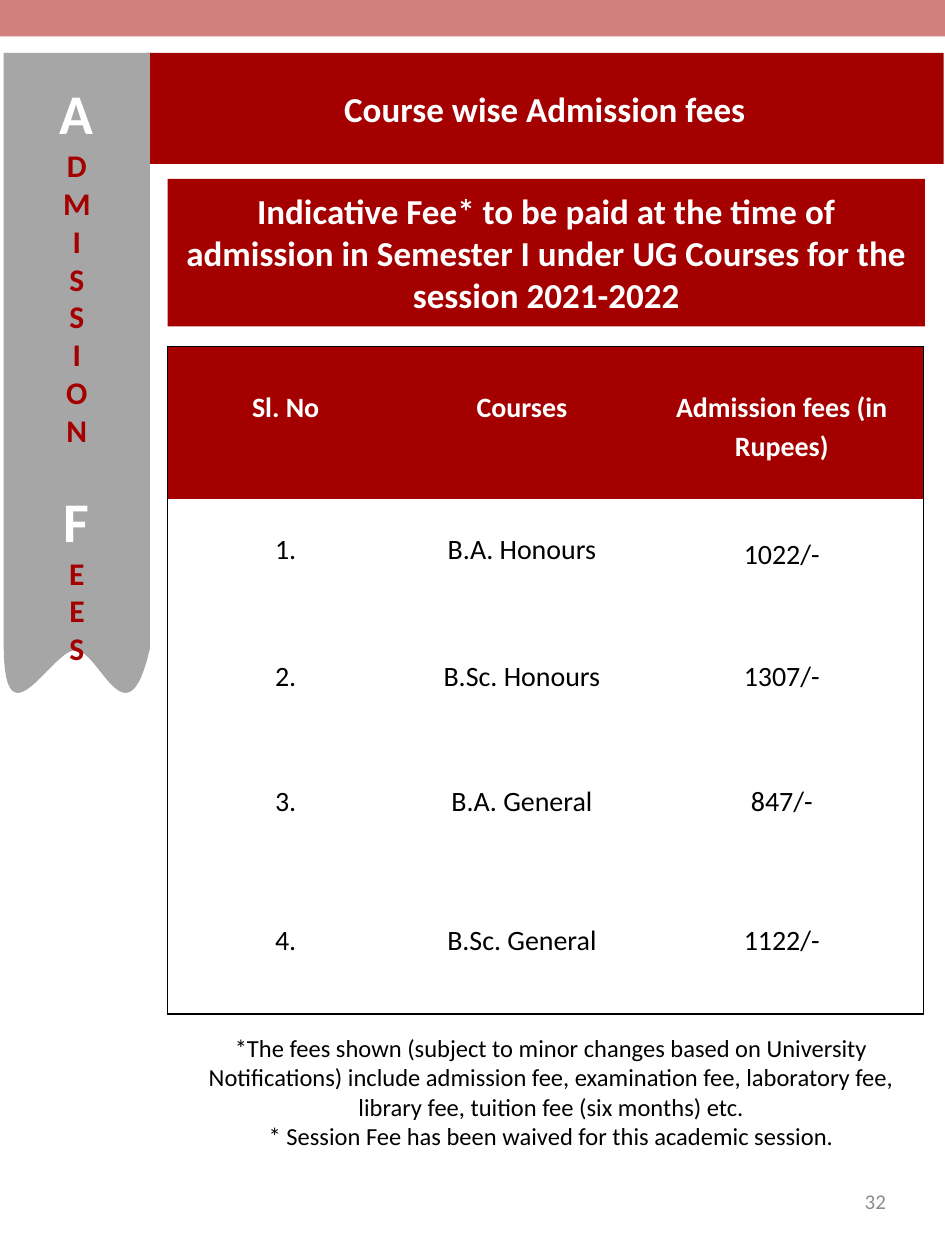
"""Build the course-wise admission fees page."""

from dataclasses import dataclass
from typing import NamedTuple

from lxml.etree import SubElement
from pptx import Presentation
from pptx.dml.color import RGBColor
from pptx.enum.dml import MSO_THEME_COLOR
from pptx.enum.shapes import MSO_SHAPE
from pptx.enum.text import MSO_ANCHOR, MSO_AUTO_SIZE, PP_ALIGN
from pptx.oxml.ns import qn
from pptx.shapes.base import BaseShape
from pptx.slide import Slide
from pptx.table import _Cell
from pptx.text.text import Font, TextFrame
from pptx.util import Inches, Length, Pt

FONT = "Calibri"
RED = RGBColor(0xA4, 0x00, 0x00)
GREY = RGBColor(0xA6, 0xA6, 0xA6)
PALE_GREY = RGBColor(0x8C, 0x8C, 0x8C)
WHITE = RGBColor(0xFF, 0xFF, 0xFF)
BLACK = RGBColor(0x00, 0x00, 0x00)
PAGE_WIDTH, PAGE_HEIGHT = Inches(7.5), Inches(10)
GRID_COLUMNS = 30
UNIT = PAGE_WIDTH / GRID_COLUMNS
CURVE_STEPS = 24


class Area(NamedTuple):
    """A rectangle in grid columns and rows."""

    left: float
    top: float
    width: float
    height: float

    def lengths(self) -> list[Length]:
        return [grid(value) for value in self]


class Point(NamedTuple):
    """A place in grid columns and rows."""

    x: float
    y: float


@dataclass(frozen=True)
class Style:
    """The look of a paragraph."""

    size: float
    color: RGBColor
    bold: bool = False
    align: PP_ALIGN = PP_ALIGN.CENTER
    spacing: float = 1.0


@dataclass(frozen=True)
class FeeRow:
    """One table row with its height and the top margin of each cell."""

    height: float
    texts: tuple[str, str, str]
    margins: tuple[float, float, float] = (1.24, 1.24, 1.24)


HEADING = Style(20, WHITE, bold=True)
HEADER = Style(16, WHITE, bold=True, spacing=1.15)
BODY = Style(16, BLACK)
NOTE = Style(14, BLACK)
NUMBER = Style(12, PALE_GREY, align=PP_ALIGN.RIGHT)
INITIAL = Style(32, WHITE, bold=True)
LETTERS = Style(18, RED, bold=True)

BAND = Area(-0.08, -0.08, 30.08, 1.24)
TITLE = Area(4.64, 1.68, 25.32, 3.52)
SUBTITLE = Area(5.32, 5.68, 24.04, 4.68)
TABLE = Area(5.32, 11, 24, 21.2)
FOOTNOTE = Area(5.32, 32.6, 24.36, 4.16)
PAGE_NUMBER = Area(21.52, 37.08, 7, 2.12)
TABLE_COLUMNS = (7.5, 7.5, 9)

RIBBON_TOP = (Point(0.12, 1.68), Point(4.76, 1.68), Point(4.76, 20.6))
RIBBON_CURVES = (
    (Point(4.76, 20.6), Point(4.04, 23.72), Point(3.16, 20.64), Point(2.4, 20.64)),
    (Point(2.4, 20.64), Point(1.64, 20.64), Point(0.16, 23.72), Point(0.12, 20.6)),
)
RIBBON_TEXT = (("A", INITIAL), ("DMISSION ", LETTERS), ("F", INITIAL), ("EES", LETTERS))

FEES = (
    FeeRow(4.84, ("Sl. No", "Courses", "Admission fees (in Rupees)")),
    FeeRow(3.88, ("1.", "B.A. Honours", "1022/-"), (1.08, 1.08, 1.24)),
    FeeRow(3.96, ("2.", "B.Sc. Honours", "1307/-")),
    FeeRow(4.4, ("3.", "B.A. General", "847/-")),
    FeeRow(4.12, ("4.", "B.Sc. General", "1122/-")),
)


def grid(value: float) -> Length:
    """Turn grid units into a length."""
    return Length(round(value * UNIT))


def set_font(font: Font, style: Style) -> None:
    """Apply a style to a font."""
    font.name, font.size, font.bold = FONT, Pt(style.size), style.bold
    font.color.rgb = style.color


def write(frame: TextFrame, style: Style, *lines: str, anchor: MSO_ANCHOR = MSO_ANCHOR.MIDDLE) -> None:
    """Fill a text frame with equally styled paragraphs."""
    frame.word_wrap = True
    frame.vertical_anchor = anchor
    frame.text = "\n".join(lines)
    for para in frame.paragraphs:
        para.alignment, para.line_spacing = style.align, style.spacing
        set_font(para.font, style)


def paint(shape: BaseShape, color: RGBColor) -> None:
    """Give a shape a plain fill without line or shadow."""
    shape.shadow.inherit = False
    shape.fill.solid()
    shape.fill.fore_color.rgb = color
    shape.line.fill.background()


def add_block(page: Slide, area: Area, color: RGBColor) -> BaseShape:
    """Add a plain rectangle."""
    block = page.shapes.add_shape(MSO_SHAPE.RECTANGLE, *area.lengths())
    paint(block, color)
    return block


def add_note(page: Slide, area: Area, style: Style, *lines: str, anchor: MSO_ANCHOR) -> None:
    """Add a text box."""
    box = page.shapes.add_textbox(*area.lengths())
    write(box.text_frame, style, *lines, anchor=anchor)


def curve_points(start: Point, first: Point, second: Point, end: Point) -> list[Point]:
    """Sample a cubic curve, leaving out its start."""
    points = []
    for step in range(1, CURVE_STEPS + 1):
        t = step / CURVE_STEPS
        weights = ((1 - t) ** 3, 3 * t * (1 - t) ** 2, 3 * t**2 * (1 - t), t**3)
        controls = (start, first, second, end)
        points.append(Point(*(sum(w * c[axis] for w, c in zip(weights, controls)) for axis in (0, 1))))
    return points


def add_ribbon(page: Slide) -> None:
    """Add the ribbon with its stacked lettering."""
    start, *outline = RIBBON_TOP
    for curve in RIBBON_CURVES:
        outline += curve_points(*curve)
    builder = page.shapes.build_freeform(grid(start.x), grid(start.y))
    builder.add_line_segments([(grid(x), grid(y)) for x, y in outline], close=True)
    ribbon = builder.convert_to_shape()
    paint(ribbon, GREY)
    frame = ribbon.text_frame
    frame.vertical_anchor = MSO_ANCHOR.MIDDLE
    frame._txBody.bodyPr.set("vert", "wordArtVert")
    para = frame.paragraphs[0]
    para.alignment = PP_ALIGN.CENTER
    for text, style in RIBBON_TEXT:
        span = para.add_run()
        span.text = text
        set_font(span.font, style)


def set_borders(cell: _Cell, edges: dict[str, bool]) -> None:
    """Draw the chosen cell edges in black and hide the others."""
    properties = cell._tc.get_or_add_tcPr()
    for index, (edge, visible) in enumerate(edges.items()):
        line = SubElement(properties, qn(f"a:{edge}"), w=str(Pt(1)))
        if visible:
            fill = SubElement(line, qn("a:solidFill"))
            SubElement(fill, qn("a:srgbClr"), val=str(BLACK))
        else:
            SubElement(line, qn("a:noFill"))
        properties.insert(index, line)


def add_fee_table(page: Slide) -> None:
    """Add the framed fee table."""
    table = page.shapes.add_table(len(FEES), len(TABLE_COLUMNS), *TABLE.lengths()).table
    table.first_row = table.horz_banding = False
    for column, width in zip(table.columns, TABLE_COLUMNS):
        column.width = grid(width)
    last_row, last_column = len(FEES) - 1, len(TABLE_COLUMNS) - 1
    for r, fee in enumerate(FEES):
        table.rows[r].height = grid(fee.height)
        for c, (text, margin) in enumerate(zip(fee.texts, fee.margins)):
            cell = table.cell(r, c)
            write(cell.text_frame, BODY if r else HEADER, text, anchor=MSO_ANCHOR.TOP)
            cell.margin_top, cell.margin_bottom = grid(margin), 0
            if r:
                cell.fill.background()
            else:
                cell.fill.solid()
                cell.fill.fore_color.rgb = RED
            set_borders(cell, {"lnL": c == 0, "lnR": c == last_column, "lnT": r == 0, "lnB": r == last_row})


def main() -> None:
    """Build and save the deck."""
    deck = Presentation()
    deck.slide_width, deck.slide_height = PAGE_WIDTH, PAGE_HEIGHT
    page = deck.slides.add_slide(deck.slide_layouts[5])
    page.background.fill.solid()
    page.background.fill.fore_color.theme_color = MSO_THEME_COLOR.BACKGROUND_1
    title = page.shapes.title
    title.left, title.top, title.width, title.height = TITLE.lengths()
    title.fill.solid()
    title.fill.fore_color.rgb = RED
    write(title.text_frame, HEADING, "Course wise Admission fees")
    title.text_frame.auto_size = MSO_AUTO_SIZE.NONE
    band = add_block(page, BAND, RED)
    SubElement(band.fill._xPr.find(qn("a:solidFill"))[0], qn("a:alpha"), val="50000")
    add_ribbon(page)
    subtitle = add_block(page, SUBTITLE, RED)
    write(subtitle.text_frame, HEADING, "Indicative Fee* to be paid at the time of admission in Semester I "
          "under UG Courses for the session 2021-2022")
    add_fee_table(page)
    add_note(page, FOOTNOTE, NOTE, "*The fees shown (subject to minor changes based on University Notifications) "
             "include admission fee, examination fee, laboratory fee, library fee, tuition fee (six months) etc.",
             "* Session Fee has been waived for this academic session.", anchor=MSO_ANCHOR.TOP)
    add_note(page, PAGE_NUMBER, NUMBER, "32", anchor=MSO_ANCHOR.MIDDLE)
    deck.save("out.pptx")


if __name__ == "__main__":
    main()
